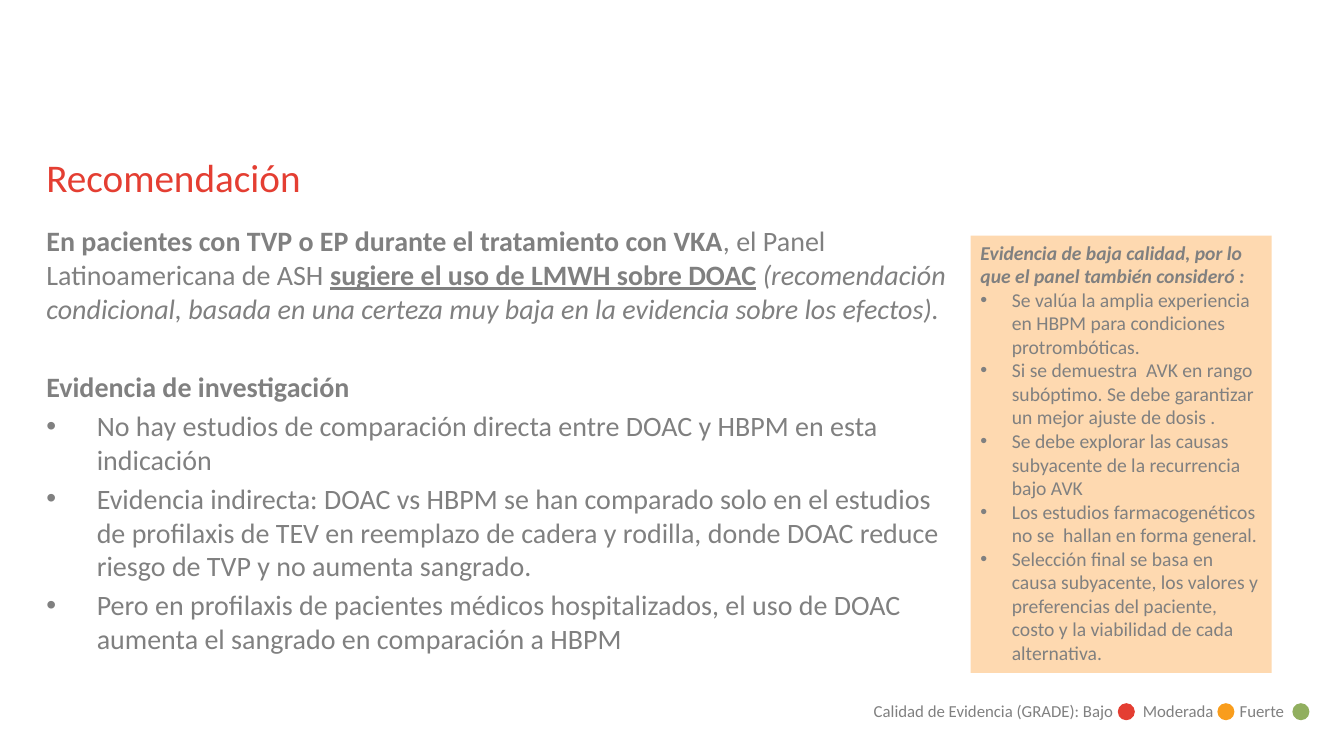
from lxml.etree import SubElement as Sub
from pptx import Presentation
from pptx.dml.color import RGBColor
from pptx.enum.shapes import MSO_SHAPE as Kind
from pptx.enum.text import MSO_ANCHOR as Anchor, PP_ALIGN as Align
from pptx.oxml.ns import qn
from pptx.util import Cm, Pt

RED = RGBColor(0xE4, 0x3E, 0x32)
ORANGE = RGBColor(0xF9, 0x9D, 0x1C)
GREEN = RGBColor(0x91, 0xAF, 0x5F)
PEACH = RGBColor(0xFE, 0xD9, 0xB0)
GREY = RGBColor(0x80, 0x80, 0x80)

LEAD = [
    ("En pacientes con TVP o EP durante el tratamiento con VKA", "b"),
    (", el Panel Latinoamericana de ASH ", ""),
    ("sugiere el uso de LMWH sobre DOAC", "bu"),
    (" ", ""),
    ("(recomendación condicional, basada en una certeza muy baja en la "
     "evidencia sobre los efectos).", "i"),
]
STUDIES = [
    "No hay estudios de comparación directa entre DOAC y HBPM en esta indicación",
    "Evidencia indirecta: DOAC vs HBPM se han comparado solo en el estudios de "
    "profilaxis de TEV en reemplazo de cadera y rodilla, donde DOAC reduce riesgo "
    "de TVP y no aumenta sangrado.",
    "Pero en profilaxis de pacientes médicos hospitalizados, el uso de DOAC "
    "aumenta el sangrado en comparación a HBPM",
]
POINTS = [
    "Se valúa la amplia experiencia en HBPM para condiciones protrombóticas.",
    "Si se demuestra  AVK en rango subóptimo. Se debe garantizar un mejor ajuste "
    "de dosis .",
    "Se debe explorar las causas subyacente de la recurrencia bajo AVK",
    "Los estudios farmacogenéticos no se  hallan en forma general.",
    "Selección final se basa en causa subyacente, los valores y preferencias del "
    "paciente, costo y la viabilidad de cada alternativa.",
]
# Dot colour and dot offset from the left of the legend
DOTS = [(RED, 6.4), (ORANGE, 8.91), (GREEN, 10.8)]
TABS = [6.78, 9.22]


def add_box(slide, x, y, w, h):
    frame = slide.shapes.add_textbox(Cm(x), Cm(y), Cm(w), Cm(h)).text_frame
    frame.word_wrap = True
    return frame


def add_shape(slide, kind, x, y, w, h, color):
    shape = slide.shapes.add_shape(kind, Cm(x), Cm(y), Cm(w), Cm(h))
    shape.shadow.inherit = False
    shape.fill.solid()
    shape.fill.fore_color.rgb = color
    shape.line.fill.background()
    return shape


def add_para(frame, text, size, color=GREY, bold=None, italic=None,
             before=0, hang=0, tabs=()):
    """Fill the empty first paragraph or append one; hang sets a bullet."""
    first = frame.paragraphs[0]
    para = frame.add_paragraph() if first.runs else first
    para.alignment = Align.LEFT
    if before:
        para.space_before = Pt(before)
    props = para._p.get_or_add_pPr()
    if hang:
        props.set("marL", str(Cm(hang)))
        props.set("indent", str(-Cm(hang)))
        Sub(props, qn("a:buFont"), typeface="Arial")
        Sub(props, qn("a:buChar"), char="•")
    if tabs:
        stops = Sub(props, qn("a:tabLst"))
        for stop in tabs:
            Sub(stops, qn("a:tab"), pos=str(Cm(stop)), algn="l")
    font = para.font
    font.name, font.size = "Calibri", Pt(size)
    font.color.rgb = color
    font.bold, font.italic = bold, italic
    parts = [(text, "")] if isinstance(text, str) else text
    for words, style in parts:
        run = para.add_run()
        run.text = words
        if "b" in style:
            run.font.bold = True
        if "i" in style:
            run.font.italic = True
        if "u" in style:
            run.font.underline = True


def add_title(slide, x, y, w, h):
    frame = add_box(slide, x, y, w, h)
    frame.margin_left = 0
    add_para(frame, "Recomendación", 28, RED)


def add_body(slide, x, y, w, h):
    frame = add_box(slide, x, y, w, h)
    frame.margin_left = frame.margin_right = 0
    frame.margin_top = frame.margin_bottom = 0
    add_para(frame, LEAD, 20)
    add_para(frame, "Evidencia de investigación", 20, bold=True, before=32)
    for study in STUDIES:
        add_para(frame, study, 20, before=4, hang=1.27)


def add_panel(slide, x, y, w, h):
    frame = add_shape(slide, Kind.RECTANGLE, x, y, w, h, PEACH).text_frame
    frame.word_wrap = True
    frame.vertical_anchor = Anchor.TOP
    add_para(frame, "Evidencia de baja calidad, por lo que el panel también "
             "consideró :", 14, bold=True, italic=True)
    for point in POINTS:
        add_para(frame, point, 14, hang=0.79)


def add_legend(slide, x, y, w, h):
    frame = add_box(slide, x, y, w, h)
    add_para(frame, "Calidad de Evidencia (GRADE): Bajo\tModerada\tFuerte", 12,
             tabs=TABS)
    for color, shift in DOTS:
        add_shape(slide, Kind.OVAL, x + shift, y + 0.19, 0.43, 0.43, color)


def main():
    deck = Presentation()
    deck.slide_width, deck.slide_height = Cm(33.87), Cm(19.05)
    slide = deck.slides.add_slide(deck.slide_layouts[6])
    add_panel(slide, 24.46, 5.94, 7.59, 11.02)
    add_legend(slide, 21.77, 17.53, 12.09, 0.76)
    add_title(slide, 1.17, 3.73, 30.48, 1.98)
    add_body(slide, 1.17, 5.64, 22.81, 9.86)
    deck.save("out.pptx")


if __name__ == "__main__":
    main()
